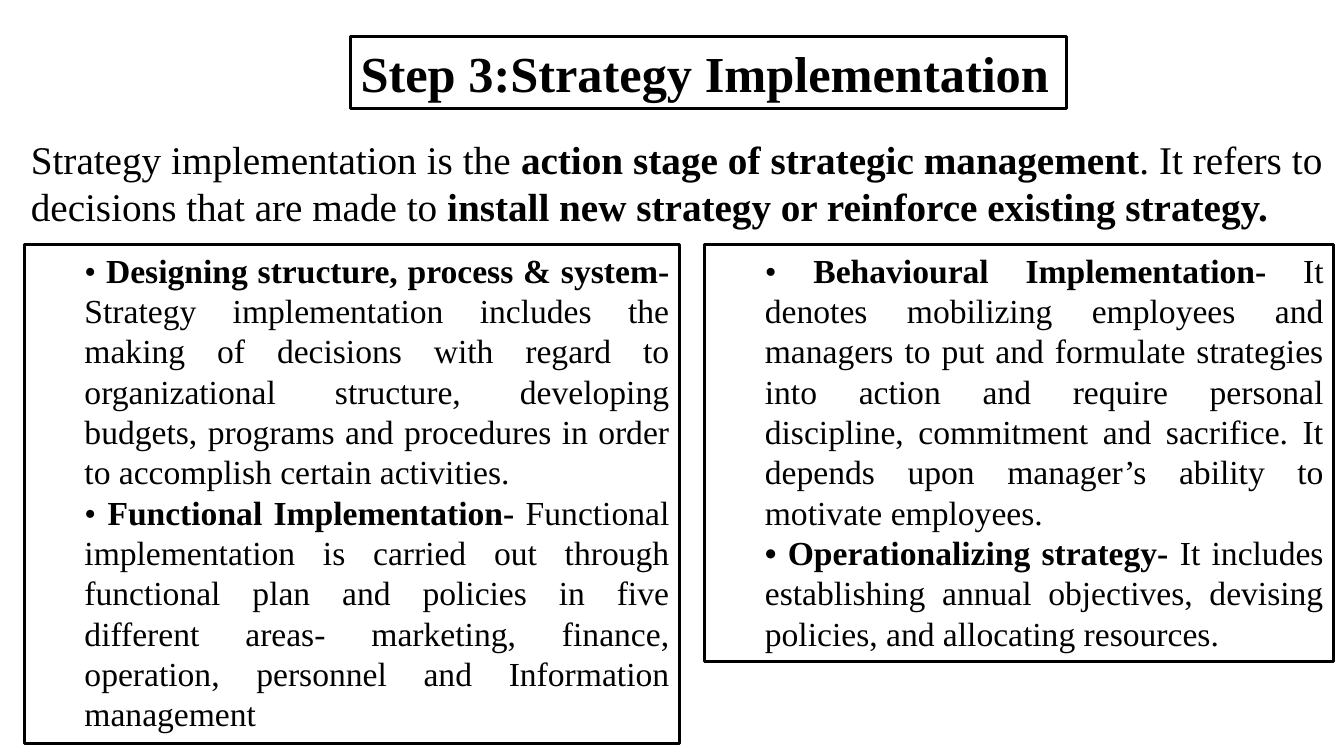
from pptx import Presentation
from pptx.dml.color import RGBColor
from pptx.enum.shapes import MSO_SHAPE
from pptx.enum.text import MSO_ANCHOR, PP_ALIGN
from pptx.util import Emu, Pt

PX = 9525  # EMU in one px, 96 px to the inch


def px(length):
    return Emu(length * PX)


def color(hex_code):
    return RGBColor.from_string(hex_code)


def add_text(para, text, *, font, size, ink, bold=False):
    span = para.add_run()
    span.text = text
    span.font.name = font
    span.font.size = Pt(size)
    span.font.bold = bold
    span.font.color.rgb = color(ink)


class StrategyPage:
    font = "Times New Roman"
    ink = "000000"
    paper = "FFFFFF"
    border = 2.25
    indent = 48

    def __init__(self, deck):
        self.page = deck.slides.add_slide(deck.slide_layouts[6])

    def fill_text(self, box, paragraphs, size, align, indent=0):
        """Each paragraph is a list of (text, bold) pairs."""
        frame = box.text_frame
        frame.word_wrap = True
        frame.vertical_anchor = MSO_ANCHOR.TOP
        for index, spans in enumerate(paragraphs):
            para = frame.add_paragraph() if index else frame.paragraphs[0]
            para.alignment = align
            if indent:
                para.level = 1
                properties = para._p.get_or_add_pPr()
                properties.set("marL", str(px(indent)))
                properties.set("indent", "0")
            for text, bold in spans:
                add_text(para, text, font=self.font, size=size, ink=self.ink, bold=bold)

    def framed(self, place, paragraphs, size, align=PP_ALIGN.JUSTIFY, indent=0):
        box = self.page.shapes.add_shape(MSO_SHAPE.RECTANGLE, *map(px, place))
        box.shadow.inherit = False
        box.fill.solid()
        box.fill.fore_color.rgb = color(self.paper)
        box.line.color.rgb = color(self.ink)
        box.line.width = Pt(self.border)
        self.fill_text(box, paragraphs, size, align, indent)

    def plain(self, place, paragraphs, size):
        box = self.page.shapes.add_textbox(*map(px, place))
        self.fill_text(box, paragraphs, size, PP_ALIGN.JUSTIFY)


TITLE = [[("Step 3:Strategy Implementation", True)]]

DEFINITION = [[
    ("Strategy implementation is the ", False),
    ("action stage of strategic management", True),
    (". It refers to decisions that are made to ", False),
    ("install new strategy or reinforce existing strategy.", True),
]]

STRUCTURE = [
    [("• ", False),
     ("Designing structure, process & system- ", True),
     ("Strategy implementation includes the making of decisions with regard to "
      "organizational structure, developing budgets, programs and procedures in "
      "order to accomplish certain activities.", False)],
    [("• ", False),
     ("Functional Implementation- ", True),
     ("Functional implementation is carried out through functional plan and "
      "policies in five different areas- marketing, finance, operation, personnel "
      "and Information management", False)],
]

BEHAVIOUR = [
    [("• ", False),
     ("Behavioural Implementation- ", True),
     ("It denotes mobilizing employees and managers to put and formulate strategies "
      "into action and require personal discipline, commitment and sacrifice. It "
      "depends upon manager’s ability to motivate employees.", False)],
    [("• Operationalizing strategy- ", True),
     ("It includes establishing annual objectives, devising policies, and "
      "allocating resources.", False)],
]


def main():
    deck = Presentation()
    deck.slide_width, deck.slide_height = px(1280), px(720)
    page = StrategyPage(deck)

    # Title and definition
    page.framed((334, 35, 682, 68), TITLE, 36, align=PP_ALIGN.LEFT)
    page.plain((20, 124, 1249, 100), DEFINITION, 28)

    # Two columns of implementation activities
    column_top = 233
    page.framed((23, column_top, 624, 475), STRUCTURE, 24, indent=page.indent)
    page.framed((671, column_top, 599, 397), BEHAVIOUR, 24, indent=page.indent)

    deck.save("out.pptx")


if __name__ == "__main__":
    main()
